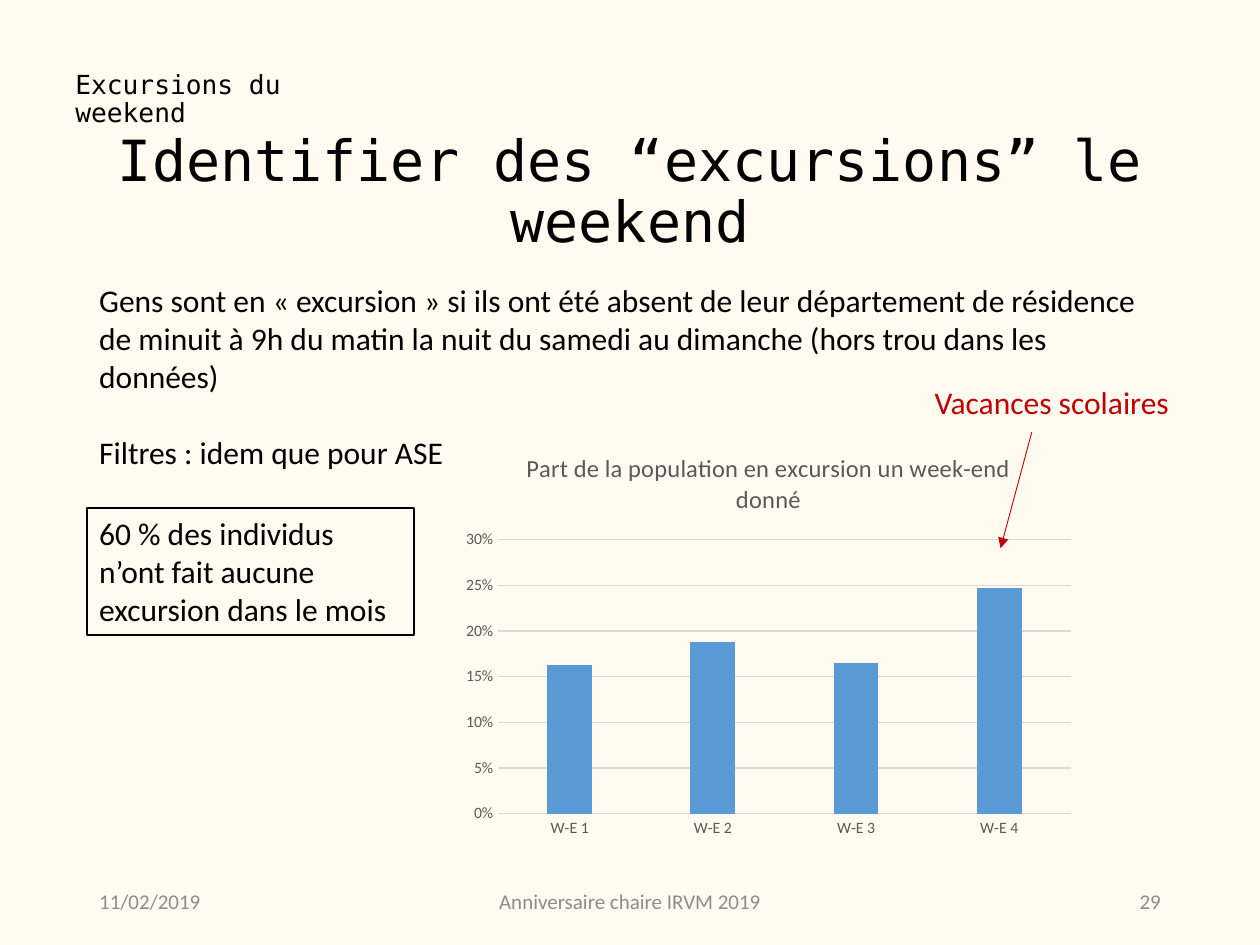
from lxml import etree
from pptx import Presentation
from pptx.chart.data import CategoryChartData
from pptx.dml.color import RGBColor
from pptx.enum.chart import XL_CHART_TYPE, XL_TICK_MARK
from pptx.enum.shapes import MSO_CONNECTOR, MSO_SHAPE
from pptx.enum.text import MSO_ANCHOR, PP_ALIGN
from pptx.oxml.ns import qn
from pptx.util import Cm, Pt

BLACK = RGBColor(0x00, 0x00, 0x00)
GREY = RGBColor(0x8C, 0x8C, 0x8C)
DARK = RGBColor(0x59, 0x59, 0x59)
PALE = RGBColor(0xD9, 0xD9, 0xD9)
RED = RGBColor(0xC0, 0x00, 0x00)
BLUE = RGBColor(0x5B, 0x9B, 0xD5)
CREAM = RGBColor(0xFF, 0xFB, 0xF0)
SANS, MONO = "Calibri", "DejaVu Sans Mono"
LEFT, MID, RIGHT = PP_ALIGN.LEFT, PP_ALIGN.CENTER, PP_ALIGN.RIGHT
TOP, CORE = MSO_ANCHOR.TOP, MSO_ANCHOR.MIDDLE

# Content: text, box in cm, size, font, colour, alignment, anchor
TEXTS = [
    ("Identifier des “excursions” le weekend",
     (1.75, 2.92, 21.9, 1.98), 32.4, MONO, BLACK, MID, CORE),
    ("11/02/2019", (1.75, 17.65, 5.72, 1.02), 12, SANS, GREY, LEFT, CORE),
    ("Anniversaire chaire IRVM 2019",
     (8.41, 17.65, 8.58, 1.02), 12, SANS, GREY, MID, CORE),
    ("29", (17.93, 17.65, 5.72, 1.02), 12, SANS, GREY, RIGHT, CORE),
    ("Excursions du weekend",
     (1.27, 1.32, 6.81, 0.91), 15, MONO, BLACK, LEFT, TOP),
    ("Gens sont en «\u00a0excursion\u00a0» si ils ont été absent de leur "
     "département de résidence de minuit à 9h du matin la nuit du samedi au "
     "dimanche (hors trou dans les données)\nFiltres : idem que pour ASE",
     (1.75, 5.54, 21.9, 4.11), 18, SANS, BLACK, LEFT, TOP),
    ("Vacances scolaires",
     (18.59, 7.59, 5.72, 1.02), 18, SANS, RED, LEFT, TOP),
]
NOTE = "60 % des individus n’ont fait aucune excursion dans le mois"
HEAD = "Part de la population en excursion un week-end donné"
SHARES = {"W-E 1": 0.163, "W-E 2": 0.188, "W-E 3": 0.165, "W-E 4": 0.247}


def style(font, size, color, name=SANS):
    font.size, font.name, font.bold = Pt(size), name, False
    font.color.rgb = color


def write(shape, text, size, name, color, align, anchor):
    frame = shape.text_frame
    frame.word_wrap = True
    frame.vertical_anchor = anchor
    frame.text = text
    for i, para in enumerate(frame.paragraphs):
        para.alignment = align
        if name == MONO:
            para.line_spacing = 0.9
        if i:
            para.space_before = Pt(size * 1.22)  # one line of gap
        for run in para.runs:
            style(run.font, size, color, name)


def add_bars(slide):
    data = CategoryChartData(number_format="0%")
    data.categories = list(SHARES)
    data.add_series("Series 1", list(SHARES.values()))
    box = [Cm(v) for v in (9.14, 8.71, 12.7, 8.33)]
    chart = slide.shapes.add_chart(
        XL_CHART_TYPE.COLUMN_CLUSTERED, *box, data).chart
    style(chart.font, 10, BLACK)
    chart.has_legend = False
    chart.has_title = True
    title = chart.chart_title
    title.include_in_layout = False
    title.text_frame.text = HEAD
    style(title.text_frame.paragraphs[0].runs[0].font, 14, DARK)

    # Bars
    plot = chart.plots[0]
    plot.gap_width, plot.overlap = 219, -27
    plot.vary_by_categories = False
    fill = plot.series[0].format.fill
    fill.solid()
    fill.fore_color.rgb = BLUE

    # Axes
    cat, val = chart.category_axis, chart.value_axis
    for axis in (cat, val):
        axis.major_tick_mark = axis.minor_tick_mark = XL_TICK_MARK.NONE
        style(axis.tick_labels.font, 9, DARK)
    val.minimum_scale, val.maximum_scale, val.major_unit = 0, 0.3, 0.05
    val.tick_labels.number_format = "0%"
    val.tick_labels.number_format_is_linked = False
    val.format.line.fill.background()
    for line in (cat.format.line, val.major_gridlines.format.line):
        line.color.rgb, line.width = PALE, Pt(0.75)


def add_arrow(slide):
    ends = [Cm(v) for v in (20.8, 8.71, 20.17, 11.05)]
    arrow = slide.shapes.add_connector(MSO_CONNECTOR.STRAIGHT, *ends)
    arrow.line.color.rgb, arrow.line.width = RED, Pt(0.5)
    etree.SubElement(arrow.line._get_or_add_ln(), qn("a:tailEnd"),
                     type="triangle")
    etree.SubElement(arrow._element.spPr, qn("a:effectLst"))


def main():
    deck = Presentation()
    deck.slide_width, deck.slide_height = Cm(25.4), Cm(19.05)
    slide = deck.slides.add_slide(deck.slide_layouts[6])
    back = slide.background.fill
    back.solid()
    back.fore_color.rgb = CREAM

    # Texts
    for text, box, *look in TEXTS:
        write(slide.shapes.add_textbox(*map(Cm, box)), text, *look)

    add_bars(slide)

    # Framed note
    box = [Cm(v) for v in (1.75, 10.24, 6.6, 2.57)]
    note = slide.shapes.add_shape(MSO_SHAPE.RECTANGLE, *box)
    note.shadow.inherit = False
    note.fill.solid()
    note.fill.fore_color.rgb = CREAM
    note.line.color.rgb, note.line.width = BLACK, Pt(1)
    write(note, NOTE, 18, SANS, BLACK, LEFT, TOP)

    add_arrow(slide)
    deck.save("out.pptx")


if __name__ == "__main__":
    main()
